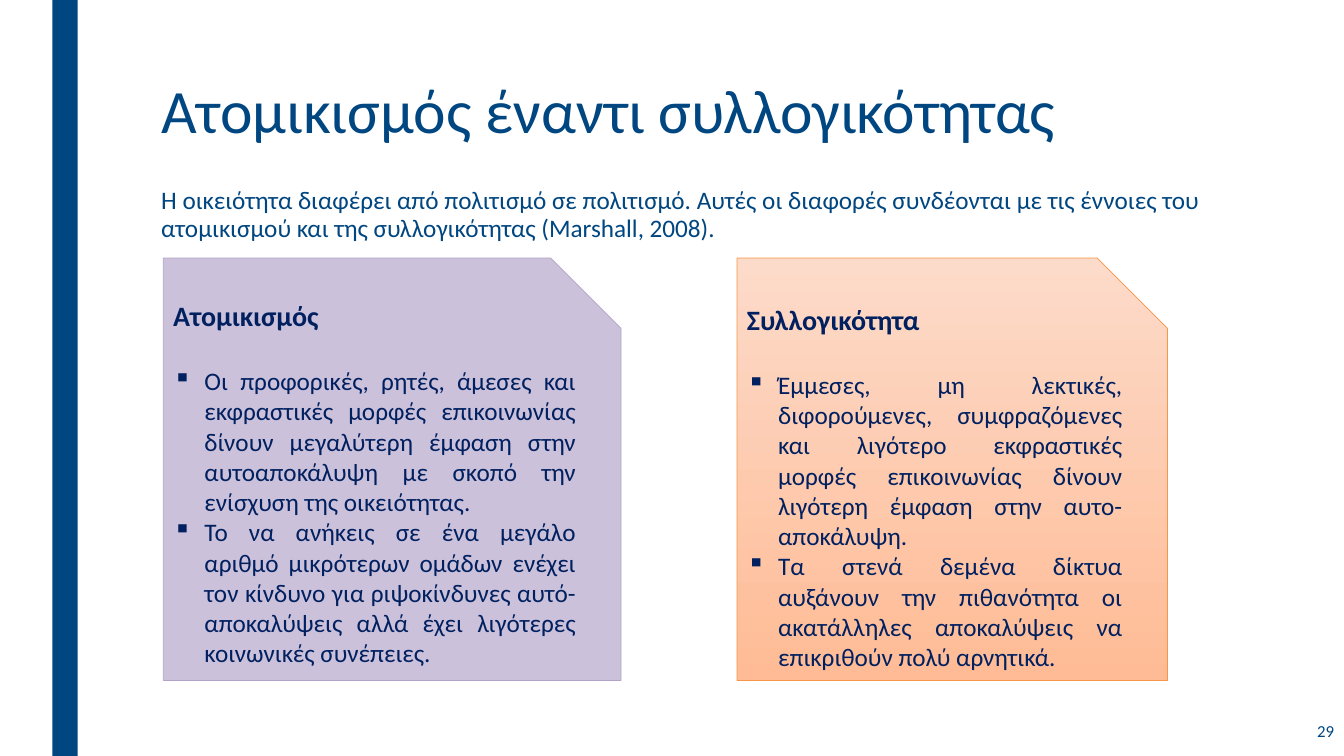
from lxml import etree
from pptx import Presentation
from pptx.dml.color import RGBColor
from pptx.enum import shapes, text
from pptx.oxml.ns import qn
from pptx.util import Inches, Pt

BLUE = RGBColor(0x00, 0x46, 0x80)
NAVY = RGBColor(0x00, 0x20, 0x60)
LILAC = RGBColor(0xCC, 0xC1, 0xDA)
LILAC_EDGE = RGBColor(0xB3, 0xA2, 0xC7)
PEACH_LIGHT = RGBColor(0xFD, 0xDB, 0xCA)
PEACH_DARK = RGBColor(0xFE, 0xBB, 0x95)
ORANGE = RGBColor(0xF7, 0x96, 0x46)
LEFT, MIDDLE = text.PP_ALIGN.LEFT, text.MSO_ANCHOR.MIDDLE
TOP, JUSTIFY = text.MSO_ANCHOR.TOP, text.PP_ALIGN.JUSTIFY


def write(para, words, size, color, bold=False, **layout):
    """Fill a paragraph; layout holds paragraph attributes such as alignment."""
    for name, value in layout.items():
        setattr(para, name, value)
    span = para.add_run()
    span.text = words
    font = {"name": "Calibri", "size": Pt(size), "bold": bold}
    for name, value in font.items():
        setattr(span.font, name, value)
    span.font.color.rgb = color


def set_frame(shape, anchor):
    frame = shape.text_frame
    frame.word_wrap = True
    frame.auto_size = text.MSO_AUTO_SIZE.NONE
    frame.vertical_anchor = anchor
    return frame


deck = Presentation()
deck.slide_width, deck.slide_height = Inches(13.33), Inches(7.5)
page = deck.slides.add_slide(deck.slide_layouts[5])

stripe = page.shapes.add_shape(
    shapes.MSO_SHAPE.RECTANGLE, Inches(0.52), 0, Inches(0.25), Inches(7.5))
stripe.shadow.inherit = False
stripe.fill.solid()
stripe.fill.fore_color.rgb = BLUE
stripe.line.fill.background()

title = page.shapes.title
title.left, title.top = Inches(1.5), Inches(0.75)
title.width, title.height = Inches(10.5), Inches(1.62)
write(set_frame(title, TOP).paragraphs[0], "Ατομικισμός έναντι συλλογικότητας",
      44, BLUE, alignment=LEFT, line_spacing=0.89)

intro = page.shapes.add_textbox(Inches(1.5), Inches(1.8), Inches(10.5), Inches(0.92))
write(set_frame(intro, TOP).paragraphs[0],
      "Η οικειότητα διαφέρει από πολιτισμό σε πολιτισμό. Αυτές οι διαφορές "
      "συνδέονται με τις έννοιες του ατομικισμού και της συλλογικότητας "
      "(Marshall, 2008).",
      18, BLUE, alignment=JUSTIFY, line_spacing=0.94)

number = page.shapes.add_textbox(Inches(11.58), Inches(7.03), Inches(1.75), Inches(0.44))
write(set_frame(number, MIDDLE).paragraphs[0], "29", 12, BLUE,
      alignment=text.PP_ALIGN.RIGHT)

# left, width, fill colours, edge, anchor, heading, points
cards = [
    (1.62, 4.54, [LILAC], LILAC_EDGE, TOP, "Ατομικισμός", [
        "Οι προφορικές, ρητές, άμεσες και εκφραστικές μορφές επικοινωνίας δίνουν "
        "μεγαλύτερη έμφαση στην αυτοαποκάλυψη με σκοπό την ενίσχυση της οικειότητας.",
        "Το να ανήκεις σε ένα μεγάλο αριθμό μικρότερων ομάδων ενέχει τον κίνδυνο για "
        "ριψοκίνδυνες αυτό-αποκαλύψεις αλλά έχει λιγότερες κοινωνικές συνέπειες."]),
    (7.31, 4.27, [PEACH_LIGHT, PEACH_DARK], ORANGE, MIDDLE, "Συλλογικότητα", [
        "Έμμεσες, μη λεκτικές, διφορούμενες, συμφραζόμενες και λιγότερο εκφραστικές "
        "μορφές επικοινωνίας δίνουν λιγότερη έμφαση στην αυτο-αποκάλυψη.",
        "Τα στενά δεμένα δίκτυα αυξάνουν την πιθανότητα οι ακατάλληλες αποκαλύψεις "
        "να επικριθούν πολύ αρνητικά."]),
]
for left, width, colors, edge, anchor, heading, points in cards:
    card = page.shapes.add_shape(
        shapes.MSO_SHAPE.SNIP_1_RECTANGLE,
        Inches(left), Inches(2.56), Inches(width), Inches(4.19))
    card.shadow.inherit = False
    if len(colors) == 1:
        card.fill.solid()
        card.fill.fore_color.rgb = colors[0]
    else:
        card.fill.gradient()
        card.fill.gradient_angle = 270
        for stop, color, position in zip(card.fill.gradient_stops, colors, (0, 1)):
            stop.color.rgb = color
            stop.position = position
    card.line.color.rgb = edge
    card.line.width = Pt(0.5)

    frame = set_frame(card, anchor)
    write(frame.paragraphs[0], heading, 20, NAVY, bold=True,
          alignment=LEFT, space_after=Pt(24))
    for point in points:
        para = frame.add_paragraph()
        props = para._p.get_or_add_pPr()
        props.set("marL", str(Inches(0.31)))
        props.set("indent", str(-Inches(0.31)))
        etree.SubElement(props, qn("a:buChar"), char="▪")
        write(para, point, 18, NAVY, alignment=JUSTIFY)

deck.save("out.pptx")
